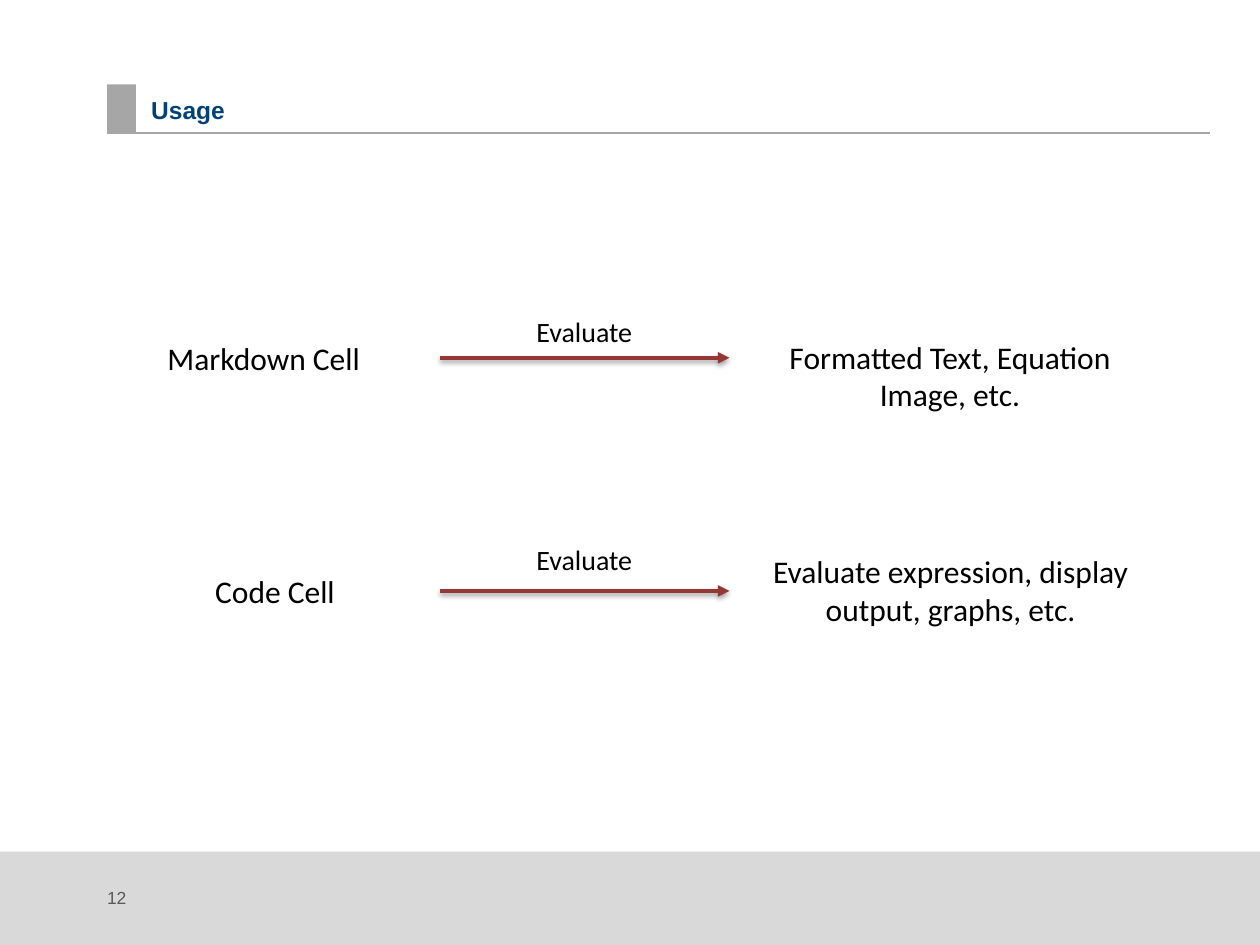
from dataclasses import dataclass

import pptx
import pptx.dml.color
import pptx.enum.shapes
import pptx.enum.text
import pptx.oxml
import pptx.oxml.ns
import pptx.util

# The slide is a grid of 100 columns by 75 rows of square cells.
COLUMNS, ROWS = 100, 75
CELL = pptx.util.Inches(0.1)

Align = pptx.enum.text.PP_ALIGN
Anchor = pptx.enum.text.MSO_ANCHOR
Fit = pptx.enum.text.MSO_AUTO_SIZE


@dataclass(frozen=True)
class Style:
    font: str
    size: float
    color: str
    bold: bool = False


@dataclass(frozen=True)
class Theme:
    title: Style = Style("Arial", 14, "004278", True)
    number: Style = Style("Arial", 10, "595959")
    body: Style = Style("Calibri", 18, "000000")
    label: Style = Style("Calibri", 16, "000000")
    rule: str = "A6A6A6"
    footer: str = "D9D9D9"
    arrow: str = "953735"
    rule_width: float = 1
    arrow_width: float = 2.25


@dataclass(frozen=True)
class Area:
    column: float
    row: float
    columns: float
    rows: float

    def lengths(self) -> list[int]:
        return [cells(n) for n in (self.column, self.row, self.columns, self.rows)]


@dataclass(frozen=True)
class Step:
    """One cell type, the arrow from it, and what evaluation gives."""
    source: str
    source_area: Area
    label_row: float
    arrow_row: float
    result: tuple[str, ...]
    result_area: Area


THEME = Theme()
MARGIN, RIGHT = 8.5, 96
ARROW_START, ARROW_END = 34.9, 57.9
LABEL_COLUMN = 41.6
STEPS = (
    Step("Markdown Cell", Area(12.3, 26.4, 17.5, 4), 24.5, 28.4,
         ("Formatted Text, Equation", "Image, etc."), Area(61.5, 26.3, 27.8, 7.1)),
    Step("Code Cell", Area(16.1, 44.9, 11.6, 4), 42.6, 46.9,
         ("Evaluate expression, display", "output, graphs, etc."),
         Area(60.2, 43.3, 30.5, 7.1)),
)


def cells(count: float) -> int:
    return round(count * CELL)


def rgb(color: str) -> pptx.dml.color.RGBColor:
    return pptx.dml.color.RGBColor.from_string(color)


def write(frame, lines: tuple[str, ...], style: Style, align=Align.LEFT) -> None:
    for index, line in enumerate(lines):
        para = frame.add_paragraph() if index else frame.paragraphs[0]
        para.alignment = align
        span = para.add_run()
        span.text = line
        span.font.name = style.font
        span.font.size = pptx.util.Pt(style.size)
        span.font.bold = style.bold
        span.font.color.rgb = rgb(style.color)


def clear_insets(frame) -> None:
    frame.margin_left = frame.margin_top = 0
    frame.margin_right = frame.margin_bottom = 0


def add_text(page, area: Area, lines: tuple[str, ...], style: Style, align=Align.LEFT):
    frame = page.shapes.add_textbox(*area.lengths()).text_frame
    frame.word_wrap = False
    frame.auto_size = Fit.SHAPE_TO_FIT_TEXT
    write(frame, lines, style, align)
    return frame


def add_block(page, area: Area, color: str) -> None:
    block = page.shapes.add_shape(
        pptx.enum.shapes.MSO_SHAPE.RECTANGLE, *area.lengths())
    block.shadow.inherit = False
    block.fill.solid()
    block.fill.fore_color.rgb = rgb(color)
    block.line.fill.background()


def add_line(page, start: float, end: float, row: float, color: str, width: float):
    line = page.shapes.add_connector(
        pptx.enum.shapes.MSO_CONNECTOR.STRAIGHT,
        cells(start), cells(row), cells(end), cells(row))
    line.line.color.rgb = rgb(color)
    line.line.width = pptx.util.Pt(width)
    effects = pptx.oxml.parse_xml(f"<a:effectLst {pptx.oxml.ns.nsdecls('a')}/>")
    line._element.spPr.append(effects)
    return line, effects


def add_arrow(page, row: float) -> None:
    arrow, effects = add_line(
        page, ARROW_START, ARROW_END, row, THEME.arrow, THEME.arrow_width)
    namespace = pptx.oxml.ns.nsdecls("a")
    arrow.line._get_or_add_ln().append(
        pptx.oxml.parse_xml(f'<a:tailEnd {namespace} type="triangle"/>'))
    blur, distance = pptx.util.Pt(3.1), pptx.util.Pt(1.6)
    effects.append(pptx.oxml.parse_xml(
        f'<a:outerShdw {namespace} blurRad="{blur}" dist="{distance}" '
        'dir="5400000" rotWithShape="0"><a:srgbClr val="000000">'
        '<a:alpha val="38000"/></a:srgbClr></a:outerShdw>'))


def add_title(page, text: str) -> None:
    title = page.shapes.title
    title.left, title.top, title.width, title.height = Area(12, 6.3, 84, 3.6).lengths()
    frame = title.text_frame
    clear_insets(frame)
    frame.auto_size = Fit.NONE
    frame.word_wrap = True
    frame.vertical_anchor = Anchor.BOTTOM
    write(frame, (text,), THEME.title)


def add_step(page, step: Step) -> None:
    add_text(page, step.source_area, (step.source,), THEME.body)
    add_arrow(page, step.arrow_row)
    add_text(page, step.result_area, step.result, THEME.body, Align.CENTER)
    add_text(page, Area(LABEL_COLUMN, step.label_row, 9.7, 3.7),
             ("Evaluate",), THEME.label)


def main() -> None:
    deck = pptx.Presentation()
    deck.slide_width, deck.slide_height = cells(COLUMNS), cells(ROWS)
    page = deck.slides.add_slide(deck.slide_layouts.get_by_name("Title Only"))

    # Header rule and marker, footer band
    add_line(page, MARGIN, RIGHT, 10.55, THEME.rule, THEME.rule_width)
    add_block(page, Area(MARGIN, 6.7, 2.3, 3.8), THEME.rule)
    add_block(page, Area(0, 67.6, COLUMNS, ROWS - 67.6), THEME.footer)
    add_title(page, "Usage")

    # Page number
    number = add_text(page, Area(MARGIN, 70.4, 5, 2.2), ("12",), THEME.number)
    clear_insets(number)
    number.auto_size = Fit.NONE
    number.word_wrap = True

    # Evaluation steps
    for step in STEPS:
        add_step(page, step)

    deck.save("out.pptx")


if __name__ == "__main__":
    main()
